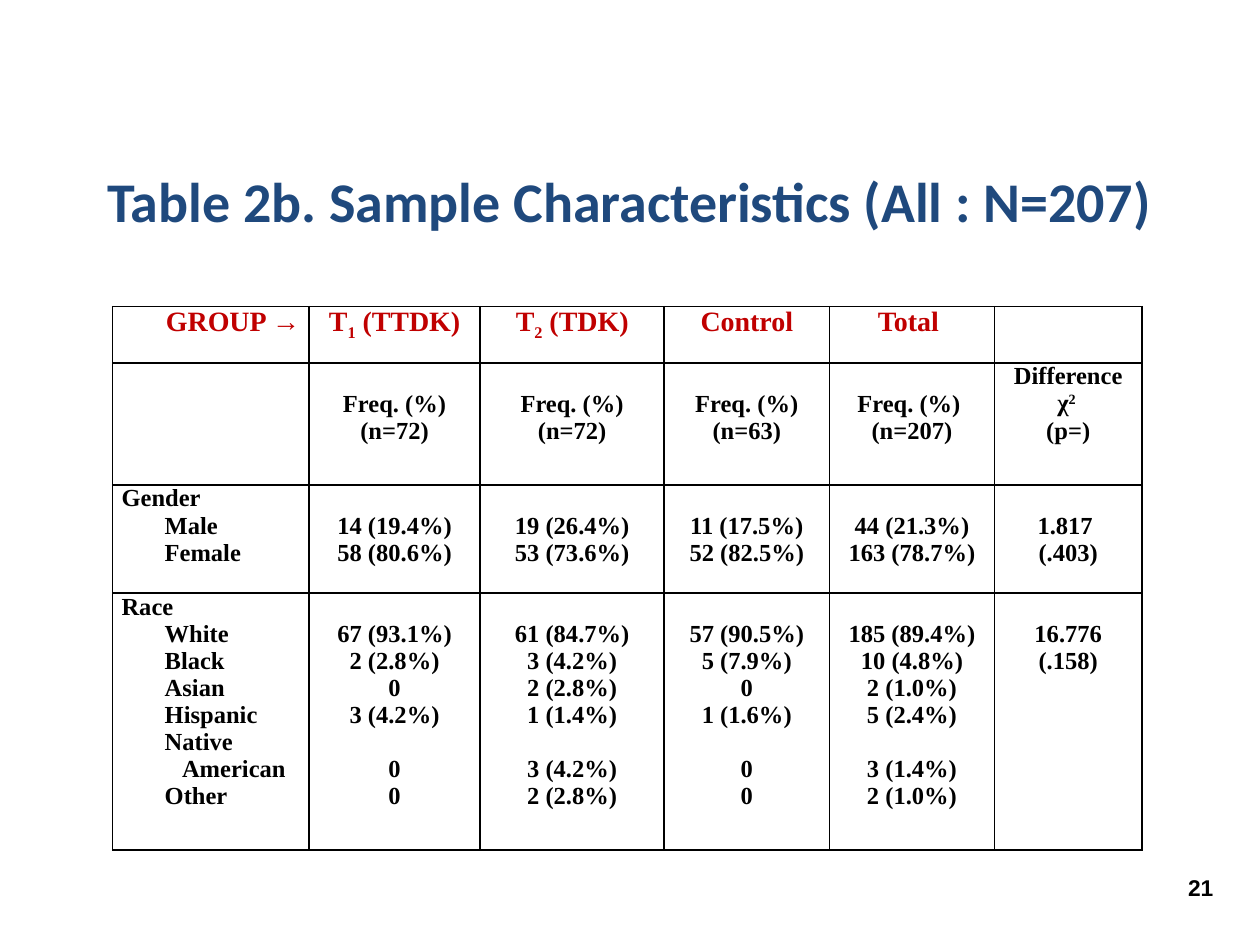
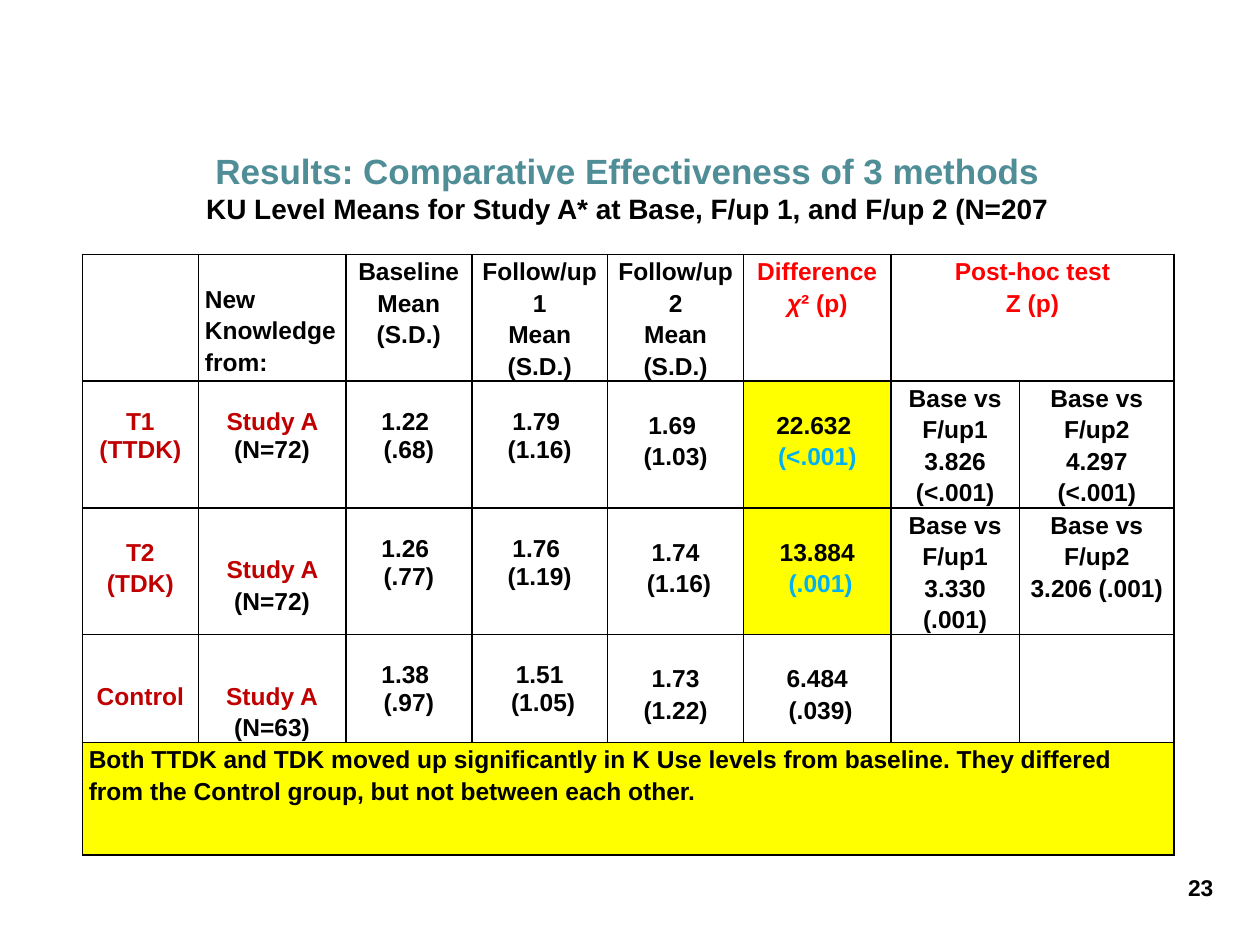
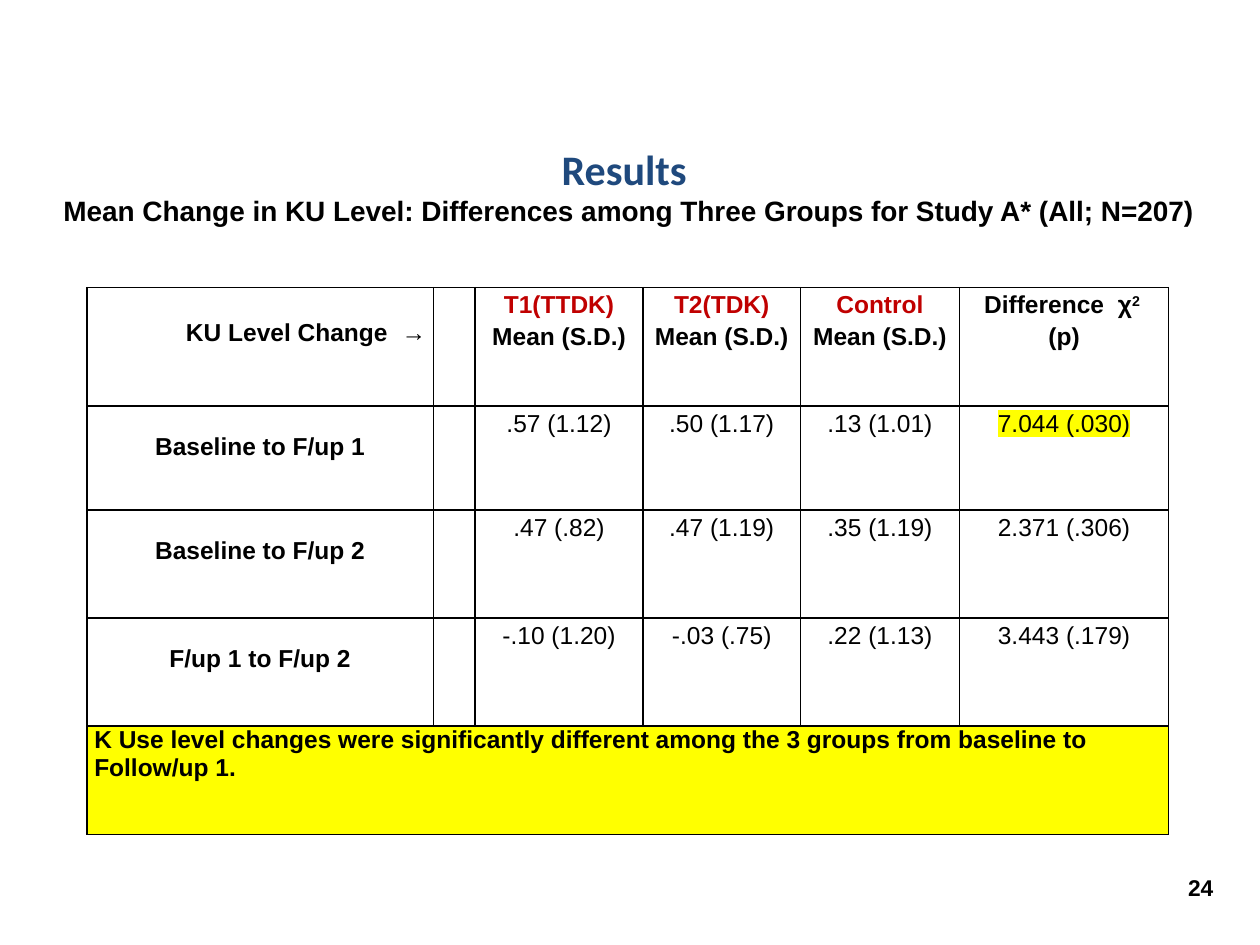
from dataclasses import dataclass
from typing import Optional

from lxml.etree import SubElement
from pptx import Presentation
from pptx.dml.color import RGBColor
from pptx.enum.text import MSO_ANCHOR, PP_ALIGN
from pptx.oxml import parse_xml
from pptx.oxml.ns import nsdecls, qn
from pptx.util import Cm, Pt

# Shared colours, fonts and spacing
BLACK, WHITE, YELLOW = "000000", "FFFFFF", "FFFF00"
DARK_RED, RED, CYAN = "C00000", "FF0000", "00B0F0"
NAVY, TEAL = "1F497D", "4F8D97"
SANS, SERIF, HEADING = "Arial", "Times New Roman", "Calibri"
LEFT, CENTER, RIGHT = PP_ALIGN.LEFT, PP_ALIGN.CENTER, PP_ALIGN.RIGHT
LINE = 0.55         # height in cm of one line of table text
LOOSE = Pt(18)      # line spacing of the results tables


@dataclass
class Run:
    text: str
    color: str = BLACK
    size: float = 14
    font: str = SANS
    bold: bool = True
    italic: bool = False
    baseline: int = 0
    highlight: Optional[str] = None
    tracking: float = 0


@dataclass
class Line:
    runs: list
    indent: float = 0
    before: float = 0


@dataclass
class Entry:
    """Content of one table cell; top is the gap above the text in cm."""
    lines: list
    align: int = CENTER
    top: float = 0
    spacing: Optional[int] = None
    fill: str = WHITE
    columns: int = 1


def rgb(color):
    return RGBColor.from_string(color)


# Text
def add_run(paragraph, part):
    run = paragraph.add_run()
    run.text = part.text
    font = run.font
    font.size, font.name = Pt(part.size), part.font
    font.bold, font.italic = part.bold, part.italic
    font.color.rgb = rgb(part.color)
    properties = run._r.get_or_add_rPr()
    if part.baseline:
        properties.set("baseline", str(part.baseline * 1000))
    if part.tracking:
        properties.set("spc", str(int(part.tracking * 100)))
    if part.highlight:
        properties.find(qn("a:solidFill")).addnext(parse_xml(
            f'<a:highlight {nsdecls("a")}><a:srgbClr val="{part.highlight}"/></a:highlight>'))


def write_lines(text_frame, lines, align, spacing=None):
    for index, line in enumerate(lines):
        paragraph = text_frame.add_paragraph() if index else text_frame.paragraphs[0]
        paragraph.alignment = align
        if spacing:
            paragraph.line_spacing = spacing
        if line.before:
            paragraph.space_before = Pt(line.before)
        if line.indent:
            paragraph._p.get_or_add_pPr().set("marL", str(Cm(line.indent)))
        for part in line.runs:
            add_run(paragraph, part)


def add_text(slide, left, top, width, height, lines, align):
    box = slide.shapes.add_textbox(Cm(left), Cm(top), Cm(width), Cm(height))
    box.text_frame.word_wrap = True
    write_lines(box.text_frame, lines, align)
    return box.text_frame


def add_title(slide, left, top, height, runs, bottom_inset=0.13):
    lines = [Line([run]) for run in runs]
    text_frame = add_text(slide, left, top, 23.42, height, lines, CENTER)
    text_frame.vertical_anchor = MSO_ANCHOR.BOTTOM
    text_frame.margin_top = 0
    text_frame.margin_bottom = Cm(bottom_inset)


def add_slide(presentation, number):
    slide = presentation.slides.add_slide(presentation.slide_layouts[6])
    add_text(slide, 19.61, 17.48, 5.1, 0.94, [Line([Run(str(number), size=13)])], RIGHT)
    return slide


# Tables
def add_borders(cell):
    properties = cell._tc.get_or_add_tcPr()
    for side in ("lnL", "lnR", "lnT", "lnB"):
        border = SubElement(properties, qn(f"a:{side}"), w=str(Pt(1)))
        fill = SubElement(border, qn("a:solidFill"))
        SubElement(fill, qn("a:srgbClr"), val=BLACK)


def add_table(slide, left, top, widths, heights, rows, inset):
    frame = slide.shapes.add_table(len(heights), len(widths), Cm(left), Cm(top),
                                   Cm(sum(widths)), Cm(sum(heights)))
    table = frame.table
    table.first_row = table.horz_banding = False
    for column, width in zip(table.columns, widths):
        column.width = Cm(width)
    for row, height in zip(table.rows, heights):
        row.height = Cm(height)
    for cell in table.iter_cells():
        add_borders(cell)
        cell.fill.solid()
        cell.fill.fore_color.rgb = rgb(WHITE)
        cell.margin_left = cell.margin_right = Cm(inset)
        cell.margin_top = cell.margin_bottom = 0
    for row_index, entries in enumerate(rows):
        column_index = 0
        for entry in entries:
            cell = table.cell(row_index, column_index)
            if entry.columns > 1:
                cell.merge(table.cell(row_index, column_index + entry.columns - 1))
            cell.margin_top = Cm(entry.top)
            cell.fill.fore_color.rgb = rgb(entry.fill)
            write_lines(cell.text_frame, entry.lines, entry.align, entry.spacing)
            column_index += entry.columns


def plain(*texts, **style):
    """One single-run line for each text."""
    return [Line([Run(text, **style)]) for text in texts]


# Sample characteristics
def serif(*texts):
    return plain(*texts, font=SERIF)


def group_heading(*parts, align=CENTER):
    """Heading whose second part, if any, is a subscript."""
    runs = [Run(text, DARK_RED, 16, SERIF, baseline=-25 if index == 1 else 0)
            for index, text in enumerate(parts)]
    return Entry([Line(runs)], align)


def category(name, *members):
    lines = serif(name, *members)
    for line in lines[1:]:
        line.indent = 1.22 if line.runs[0].text == "American" else 0.87
    return Entry(lines, LEFT)


def frequencies(*texts):
    lines = serif(*texts)
    if len(lines) > 4:
        lines[4].before = 15.5    # leaves the "Native" line free
    return Entry(lines, top=LINE)


def build_characteristics(presentation):
    slide = add_slide(presentation, 21)
    headings = [group_heading("GROUP →", align=RIGHT), group_heading("T", "1", " (TTDK)"),
                group_heading("T", "2", " (TDK)"), group_heading("Control"),
                group_heading("Total ")]
    chi_square = Line([Run("χ", font=SERIF), Run("2", font=SERIF, baseline=30),
                       Run(" ", font=SERIF, baseline=30, tracking=5)])
    units = [Entry([])] + [frequencies(label, f"(n={count})") for label, count in (
        ("Freq. (%)", 72), ("Freq. (%)", 72), ("Freq. (%)", 63), ("Freq. (%) ", 207))]
    units.append(Entry(serif("Difference") + [chi_square] + serif("(p=)")))
    gender = [category("Gender", "Male", "Female"),
              frequencies("14 (19.4%)", "58 (80.6%)"),
              frequencies("19 (26.4%)", "53 (73.6%)"),
              frequencies("11 (17.5%)", "52 (82.5%)"),
              frequencies("44 (21.3%)", "163 (78.7%)"),
              frequencies("1.817 ", "(.403)")]
    race = [category("Race", "White", "Black", "Asian", "Hispanic", "Native",
                     "American", "Other"),
            frequencies("67 (93.1%)", "2 (2.8%)", "0", "3 (4.2%)", "0", "0"),
            frequencies("61 (84.7%)", "3 (4.2%)", "2 (2.8%)", "1 (1.4%)", "3 (4.2%)",
                        "2 (2.8%)"),
            frequencies("57 (90.5%)", "5 (7.9%)", "0", "1 (1.6%)", "0", "0"),
            frequencies("185 (89.4%)", "10 (4.8%)", "2 (1.0%)", "5 (2.4%)", "3 (1.4%)",
                        "2 (1.0%)"),
            frequencies("16.776 (.158)")]
    add_table(slide, 2.27, 6.18, [3.96, 3.45, 3.71, 3.33, 3.33, 2.97],
              [1.14, 2.46, 2.18, 5.18], [headings, units, gender, race], 0.18)
    add_title(slide, 0.99, 3.27, 1.57, [
        Run("Table 2b. Sample Characteristics (All : N=207)", NAVY, 32, HEADING)])


# Comparative effectiveness
def loose(*texts, color=BLACK, **layout):
    return Entry(plain(*texts, color=color), spacing=LOOSE, **layout)


def study(size, separator, top, spacing):
    name, count = ("Study A ", f"(N={size})") if separator else ("Study A", f" (N={size})")
    return Entry([Line([Run(name, DARK_RED), Run(count)])], top=top, spacing=spacing)


def measures(baseline, first, second, difference, significant):
    """Three means and the test of their difference."""
    value, probability = difference
    test = Entry(plain(value) + plain(probability, color=CYAN if significant else BLACK),
                 top=LINE, spacing=LOOSE, fill=YELLOW if significant else WHITE)
    return [Entry(plain(*baseline), top=LINE), Entry(plain(*first), top=LINE),
            loose(*second, top=LINE), test]


def post_hoc(*results):
    return [loose(f"Base vs F/up{number}", result)
            for number, result in enumerate(results, 1)]


def build_effectiveness(presentation):
    slide = add_slide(presentation, 23)
    low = LINE + 0.35
    chi_square = Line([Run("χ", RED, italic=True), Run("² (p)", RED)])
    headings = [
        Entry([]),
        loose("New Knowledge from:", align=LEFT, top=LINE),
        loose("Baseline", "Mean (S.D.)"),
        loose("Follow/up 1", "Mean (S.D.)"),
        loose("Follow/up 2", "Mean (S.D.)"),
        Entry(plain("Difference", color=RED) + [chi_square], spacing=LOOSE),
        loose("Post-hoc test", "Z (p)", color=RED, columns=2)]
    first_method = [
        Entry(plain("T1 (TTDK)", color=DARK_RED), top=LINE), study(72, True, LINE, None),
        *measures(("1.22 ", "(.68)"), ("1.79 ", "(1.16)"), ("1.69 ", "(1.03)"),
                  ("22.632 ", "(<.001)"), True),
        *post_hoc("3.826 (<.001)", "4.297 (<.001)")]
    second_method = [
        loose("T2", "(TDK)", color=DARK_RED, top=LINE), study(72, True, low, LOOSE),
        *measures(("1.26 ", "(.77)"), ("1.76 ", "(1.19)"), ("1.74", " (1.16)"),
                  ("13.884", " (.001)"), True),
        *post_hoc("3.330 (.001)", "3.206 (.001)")]
    control = [
        loose("Control", color=DARK_RED, top=low), study(63, False, low, LOOSE),
        *measures(("1.38 ", "(.97)"), ("1.51", " (1.05)"), ("1.73", "(1.22)"),
                  ("6.484", " (.039)"), False)]
    conclusion = [loose(
        "Both TTDK and TDK moved up significantly in K Use levels from baseline. "
        "They differed from the Control group, but not between each other.",
        align=LEFT, fill=YELLOW, columns=8)]
    add_table(slide, 1.66, 5.13, [2.34, 2.97, 2.54, 2.74, 2.74, 2.97, 2.59, 3.12],
              [2.55, 2.56, 2.55, 2.18, 2.27],
              [headings, first_method, second_method, control, conclusion], 0.13)
    add_title(slide, 0.94, 3.09, 1.57, [
        Run("Results: Comparative Effectiveness of 3 methods", TEAL, 20),
        Run("KU Level Means for Study A* at Base, F/up 1, and F/up 2 (N=207", size=16)])


# Mean change
def change_row(period, *values, highlight=None):
    marks = [None] * (len(values) - 1) + [highlight]
    return [Entry(plain(period), top=LINE), Entry([])] + [
        Entry(plain(value, bold=False, highlight=mark), spacing=LOOSE)
        for value, mark in zip(values, marks)]


def build_mean_change(presentation):
    slide = add_slide(presentation, 24)
    wide_space = Run(" ", tracking=3.9)
    change = Line([Run("KU Level Change"), wide_space, Run("→", bold=False)])
    chi_square = Line([Run("Difference"), wide_space, Run("χ"), Run("2 ", baseline=30)])
    headings = [Entry([change], RIGHT, LINE, LOOSE), Entry([])]
    headings += [Entry(plain(group, color=DARK_RED) + plain("Mean (S.D.)"), spacing=LOOSE)
                 for group in ("T1(TTDK)", "T2(TDK)", "Control")]
    headings.append(Entry([chi_square] + plain("(p)"), spacing=LOOSE))
    rows = [
        headings,
        change_row("Baseline to F/up 1", ".57 (1.12)", ".50 (1.17)", ".13 (1.01)",
                   "7.044 (.030)", highlight=YELLOW),
        change_row("Baseline to F/up 2", ".47 (.82)", ".47 (1.19)", ".35 (1.19)",
                   "2.371 (.306)"),
        change_row("F/up 1 to F/up 2", "-.10 (1.20)", "-.03 (.75)", ".22 (1.13)",
                   "3.443 (.179)"),
        [Entry(plain("K Use level changes were significantly different among the 3 groups "
                     "from baseline to Follow/up 1."), LEFT, fill=YELLOW, columns=6)]]
    add_table(slide, 1.75, 5.8, [6.99, 0.84, 3.38, 3.18, 3.2, 4.22],
              [2.38, 2.1] + [2.18] * 3, rows, 0.15)
    add_title(slide, 0.97, 3.07, 2.31, [
        Run("Results ", NAVY, 24, HEADING),
        Run("Mean Change in KU Level: Differences among Three Groups for Study A* "
            "(All; N=207)", size=16)], bottom_inset=0.8)


def main():
    presentation = Presentation()
    presentation.slide_width, presentation.slide_height = Cm(25.4), Cm(19.05)
    build_characteristics(presentation)
    build_effectiveness(presentation)
    build_mean_change(presentation)
    presentation.save("out.pptx")


if __name__ == "__main__":
    main()
